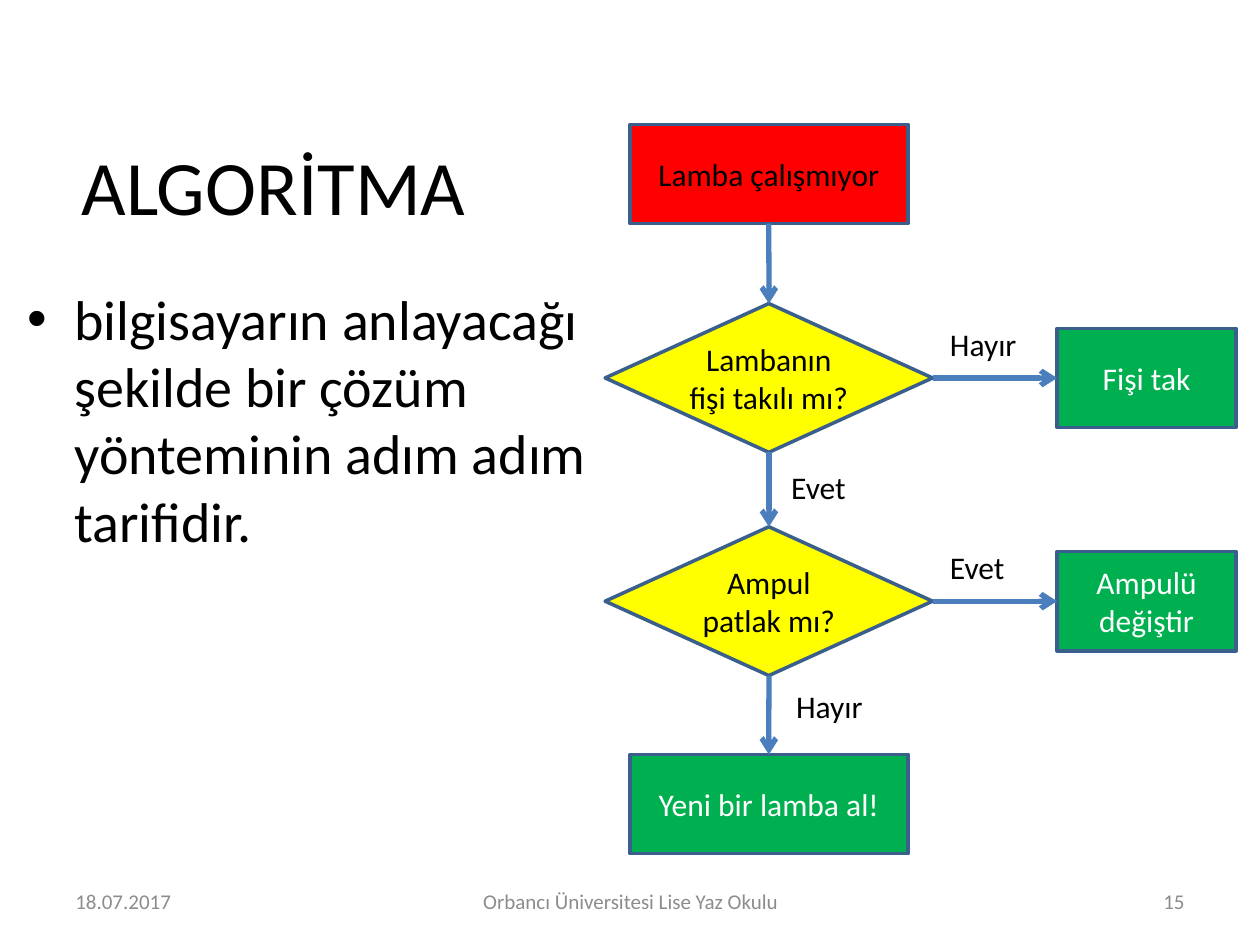
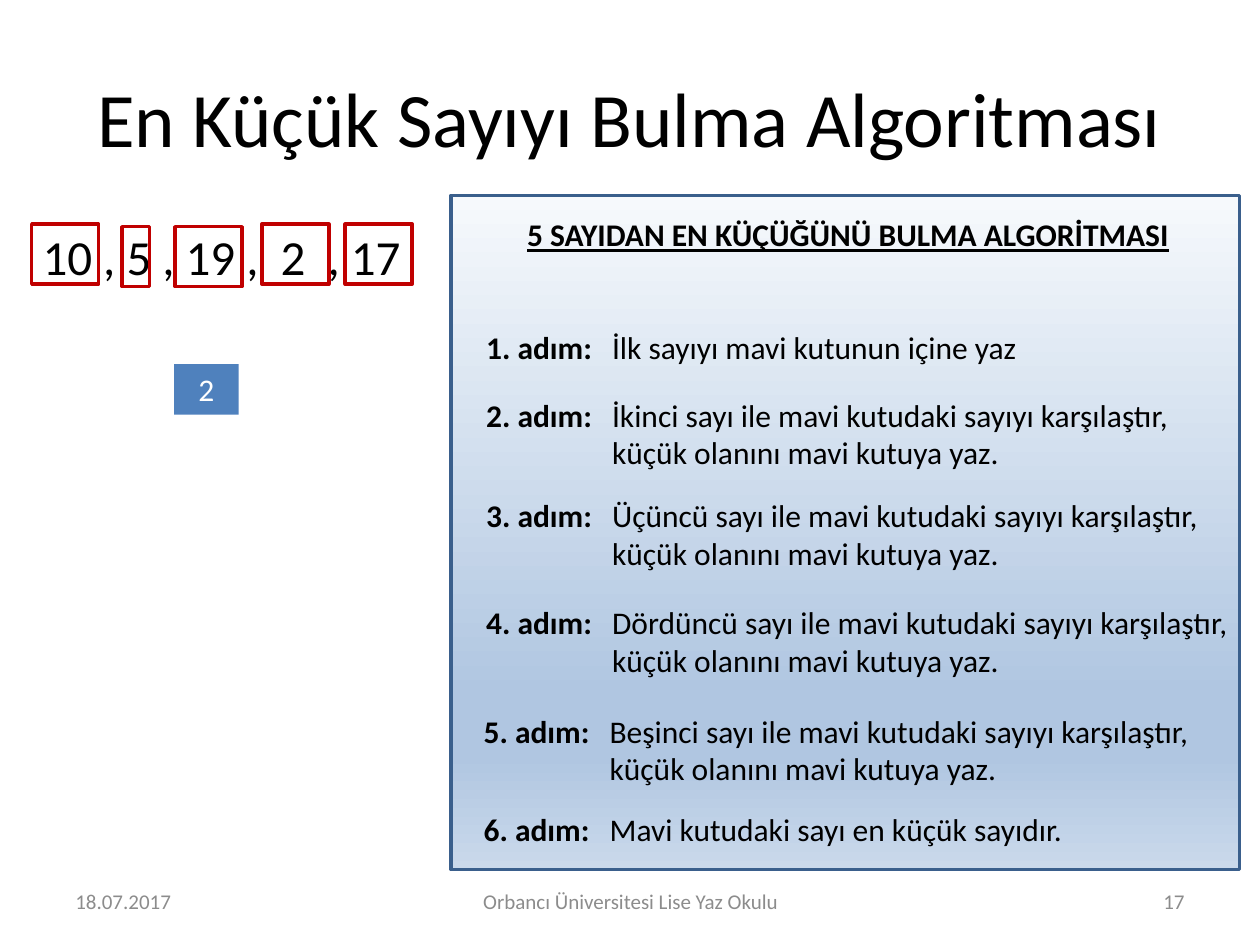
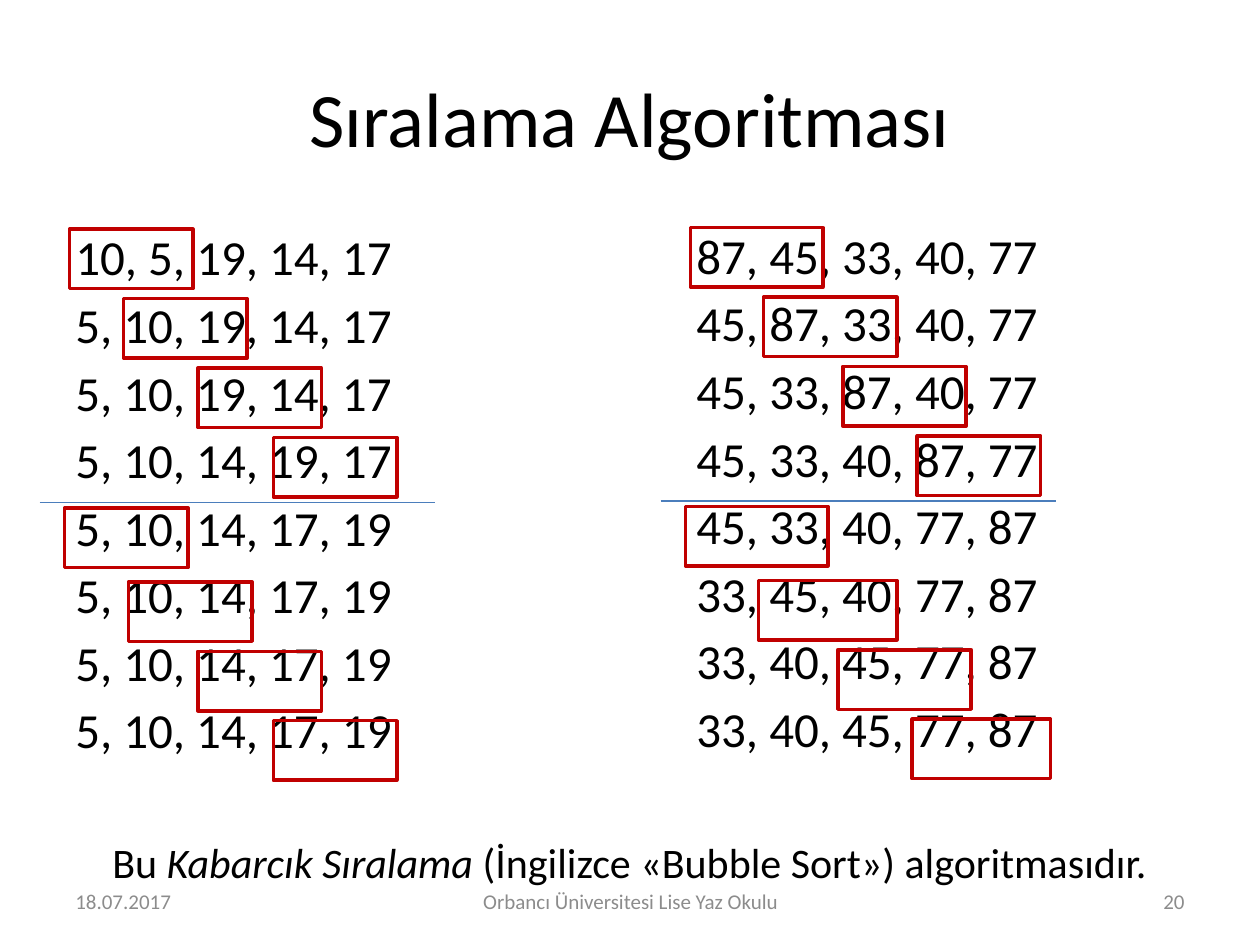
from lxml import etree
from pptx import Presentation
from pptx.dml.color import RGBColor
from pptx.enum.shapes import MSO_CONNECTOR, MSO_SHAPE
from pptx.enum.text import MSO_ANCHOR, PP_ALIGN
from pptx.oxml.ns import qn
from pptx.util import Cm, Pt

LEFT, MID, RIGHT = PP_ALIGN.LEFT, PP_ALIGN.CENTER, PP_ALIGN.RIGHT
TOP, HALF = MSO_ANCHOR.TOP, MSO_ANCHOR.MIDDLE
RECT = MSO_SHAPE.RECTANGLE
STEP = MSO_SHAPE.FLOWCHART_PROCESS
TEST = MSO_SHAPE.FLOWCHART_DECISION
LINE = MSO_CONNECTOR.STRAIGHT
FONT = "Calibri"
TONES = {
    "black": "000000", "white": "FFFFFF", "gray": "8C8C8C",
    "red": "FF0000", "dark": "C00000", "yellow": "FFFF00",
    "green": "00B050", "blue": "4F81BD", "edge": "3A5F8C", "wire": "4B7EBC",
}
FADE = [(0, "F6F9FC"), (74, "B0C6E1"), (83, "B0C6E1"), (100, "CAD9EB")]
TITLE = (1.27, 0.76, 22.86, 3.18)


def tone(name):
    """Return the named colour."""
    return RGBColor.from_string(TONES[name])


def style(run, size, hue="black"):
    """Set font, size and colour of a run."""
    run.font.name = FONT
    run.font.size = Pt(size)
    run.font.color.rgb = tone(hue)


def fill_text(frame, words, size, hue, align, gap=0):
    """Write the lines of words into a frame and format them."""
    frame.text = words
    for par in frame.paragraphs:
        par.alignment = align
        par.space_before = Pt(gap)
        for run in par.runs:
            style(run, size, hue)


def add_text(slide, spot, words, size=18, hue="black", align=LEFT,
             anchor=TOP, wrap=True, gap=0):
    """Add a text box and return its frame."""
    frame = slide.shapes.add_textbox(*map(Cm, spot)).text_frame
    frame.word_wrap = wrap
    frame.vertical_anchor = anchor
    fill_text(frame, words, size, hue, align, gap)
    return frame


def add_run(par, words, size):
    """Append a formatted run to a paragraph."""
    run = par.add_run()
    run.text = words
    style(run, size)
    return run


def hang(par, left, first, mark=None):
    """Indent a paragraph and give it a bullet if there is a mark."""
    props = par._p.get_or_add_pPr()
    props.set("marL", str(Cm(left)))
    props.set("indent", str(Cm(first)))
    if mark:
        etree.SubElement(props, qn("a:buFont")).set("typeface", "Arial")
        etree.SubElement(props, qn("a:buChar")).set("char", mark)


def add_box(slide, kind, spot, fill=None, edge=None):
    """Add a shape with the given fill and edge."""
    box = slide.shapes.add_shape(kind, *map(Cm, spot))
    box.shadow.inherit = False
    if fill:
        box.fill.solid()
        box.fill.fore_color.rgb = tone(fill)
    else:
        box.fill.background()
    if edge:
        box.line.color.rgb = tone(edge)
        box.line.width = Pt(2)
    else:
        box.line.fill.background()
    return box


def add_node(slide, kind, spot, fill, words, hue="black", edge="edge"):
    """Add a shape with centred text."""
    node = add_box(slide, kind, spot, fill, edge)
    frame = node.text_frame
    frame.word_wrap = True
    frame.vertical_anchor = HALF
    if kind == TEST:
        frame.margin_left = frame.margin_right = 0
        frame.margin_top = frame.margin_bottom = 0
    fill_text(frame, words, 18, hue, MID)
    return node


def add_line(slide, ends, width):
    """Add a straight line without shadow."""
    line = slide.shapes.add_connector(LINE, *map(Cm, ends))
    line.line.color.rgb = tone("wire")
    line.line.width = Pt(width)
    etree.SubElement(line._element.spPr, qn("a:effectLst"))
    return line


def add_arrow(slide, start, out, end, into):
    """Join two nodes with an arrow."""
    line = add_line(slide, (0, 0, 1, 1), 3)
    line.begin_connect(start, out)
    line.end_connect(end, into)
    tail = etree.SubElement(line.line._get_or_add_ln(), qn("a:tailEnd"))
    tail.set("type", "arrow")


def add_fade(box):
    """Give a box the vertical colour fade."""
    box.fill.gradient()
    box.fill.gradient_angle = 270
    stops = box._element.spPr.find(".//" + qn("a:gsLst"))
    for stop in list(stops):
        stops.remove(stop)
    for place, code in FADE:
        stop = etree.SubElement(stops, qn("a:gs"))
        stop.set("pos", str(place * 1000))
        etree.SubElement(stop, qn("a:srgbClr")).set("val", code)


def add_page(deck, title, number, spot=TITLE, align=MID):
    """Add a slide with title and footer."""
    slide = deck.slides.add_slide(deck.slide_layouts[6])
    add_text(slide, spot, title, 44, align=align, anchor=HALF)
    for left, width, words, side in (
        (1.27, 5.92, "18.07.2017", LEFT),
        (8.69, 8.05, "Orbancı Üniversitesi Lise Yaz Okulu", MID),
        (18.21, 5.92, str(number), RIGHT),
    ):
        add_text(slide, (left, 17.65, width, 1.02), words, 12, "gray",
                 side, HALF)
    return slide


def draw_flow(deck):
    """Draw the lamp flowchart."""
    slide = add_page(deck, "ALGORİTMA", 15, (1.4, 2.13, 14.22, 3.18), LEFT)
    body = add_text(
        slide, (0.3, 5.61, 12.22, 11.4),
        "bilgisayarın anlayacağı şekilde bir çözüm yönteminin adım adım "
        "tarifidir.", 32, gap=6)
    hang(body.paragraphs[0], 0.95, -0.95, "•")
    start = add_node(slide, STEP, (12.7, 2.51, 5.6, 2), "red",
                     "Lamba çalışmıyor")
    plug, bulb = [
        add_node(slide, TEST, (12.2, top, 6.6, 3), "yellow", words)
        for top, words in ((6.12, "Lambanın fişi takılı mı?"),
                           (10.62, "Ampul patlak mı?"))]
    buy = add_node(slide, STEP, (12.7, 15.21, 5.6, 2), "green",
                   "Yeni bir lamba al!", "white")
    fix, swap = [
        add_node(slide, STEP, (21.31, top, 3.61, 2), "green", words, "white")
        for top, words in ((6.62, "Fişi tak"), (11.12, "Ampulü değiştir"))]
    for upper, lower in ((start, plug), (plug, bulb), (bulb, buy)):
        add_arrow(slide, upper, 2, lower, 0)
    for test, act in ((plug, fix), (bulb, swap)):
        add_arrow(slide, test, 3, act, 1)
    for left, top, width, words in (
        (18.9, 6.43, 1.88, "Hayır"), (18.9, 10.92, 1.63, "Evet"),
        (15.7, 9.32, 1.63, "Evet"), (15.8, 13.72, 1.88, "Hayır"),
    ):
        add_text(slide, (left, top, width, 1.02), words, wrap=False)


def draw_steps(deck):
    """Draw the steps that find the smallest number."""
    slide = add_page(deck, "En Küçük Sayıyı Bulma Algoritması", 17)
    add_fade(add_box(slide, RECT, (9.09, 3.94, 15.9, 13.59), edge="edge"))
    body = add_text(slide, (0.61, 4.45, 8.94, 13.08), "10 , 5 , 19 ,", 28,
                    gap=5)
    for words, space in ((" ", 633), ("2", 0), (" ", 633), (", 17", 0)):
        run = add_run(body.paragraphs[0], words, 28)
        run.font._element.set("spc", str(space))
    for left, top, width in ((0.64, 4.52, 1.35), (2.46, 4.57, 0.56),
                             (3.53, 4.57, 1.35), (5.28, 4.52, 1.35),
                             (6.96, 4.52, 1.35)):
        add_box(slide, RECT, (left, top, width, 1.21), edge="dark")
    add_node(slide, RECT, (3.51, 7.34, 1.3, 1.02), "blue", "2", "white", None)
    head = add_text(slide, (9.5, 4.22, 15.19, 1.02),
                    "5 SAYIDAN EN KÜÇÜĞÜNÜ BULMA ALGORİTMASI", align=MID)
    font = head.paragraphs[0].runs[0].font
    font.bold = font.underline = True
    both = (" sayı ile mavi kutudaki sayıyı karşılaştır,\n"
            "küçük olanını mavi kutuya yaz.")
    steps = (
        (9.55, 6.48, 11.33, "İlk sayıyı mavi kutunun içine yaz"),
        (9.55, 7.85, 14.55, "İkinci" + both),
        (9.55, 9.88, 15.16, "Üçüncü" + both),
        (9.55, 12.04, 15.77, "Dördüncü" + both),
        (9.5, 14.22, 15.01, "Beşinci" + both),
        (9.5, 16.21, 12.32, "Mavi kutudaki sayı en küçük sayıdır."),
    )
    for count, (left, top, width, words) in enumerate(steps, 1):
        first, *rest = words.split("\n")
        frame = add_text(slide, (left, top, width, 1.02 + 0.78 * len(rest)),
                         "\n".join([f"{count}. adım:"] + rest), wrap=False)
        for par in frame.paragraphs:
            hang(par, 2.54, 0)
        par = frame.paragraphs[0]
        hang(par, 2.54, -2.54)
        par.runs[0].font.bold = True
        add_run(par, "\t" + first, 18)


def sort_rows(nums):
    """List the row before each test in two bubble sort passes."""
    nums, rows = list(nums), []
    for _ in range(2):
        for spot in range(len(nums) - 1):
            rows.append(", ".join(map(str, nums)))
            nums[spot:spot + 2] = sorted(nums[spot:spot + 2])
    return "\n".join(rows)


def add_sort(slide, left, top, nums, boxes):
    """Add a column of sort rows with frames and a pass line."""
    add_text(slide, (left, top, 8.94, 13.08), sort_rows(nums), 28, gap=5)
    drops = (0.17, 1.57, 2.97, 4.37, 5.79, 7.28, 8.68, 10.08)
    for drop, (side, width) in zip(drops, boxes):
        add_box(slide, RECT, (side, top + drop, width, 1.2), edge="dark")
    rule = top + 5.68
    add_line(slide, (left - 0.47, rule, left + 7.5, rule), 0.75)


def draw_sort(deck):
    """Draw the two bubble sort columns."""
    slide = add_page(deck, "Sıralama Algoritması", 20)
    sides = (1.4, 2.49, 3.99, 5.51, 1.3, 2.59, 3.99, 5.51)
    add_sort(slide, 1.27, 4.45, (10, 5, 19, 14, 17),
             [(side, 2.49) for side in sides])
    add_sort(slide, 13.79, 4.42, (87, 45, 33, 40, 77),
             ((13.92, 2.67), (15.39, 2.69), (16.99, 2.49), (18.49, 2.49),
              (13.82, 2.87), (15.29, 2.79), (16.89, 2.69), (18.39, 2.79)))
    note = add_text(slide, (0.81, 16.74, 23.77, 1.27), "Bu ", 24, align=MID)
    par = note.paragraphs[0]
    add_run(par, "Kabarcık Sıralama", 24).font.italic = True
    add_run(par, " (İngilizce «Bubble Sort») algoritmasıdır.", 24)


def main():
    """Build and save the deck."""
    deck = Presentation()
    deck.slide_width, deck.slide_height = Cm(25.4), Cm(19.05)
    draw_flow(deck)
    draw_steps(deck)
    draw_sort(deck)
    deck.save("out.pptx")


if __name__ == "__main__":
    main()
